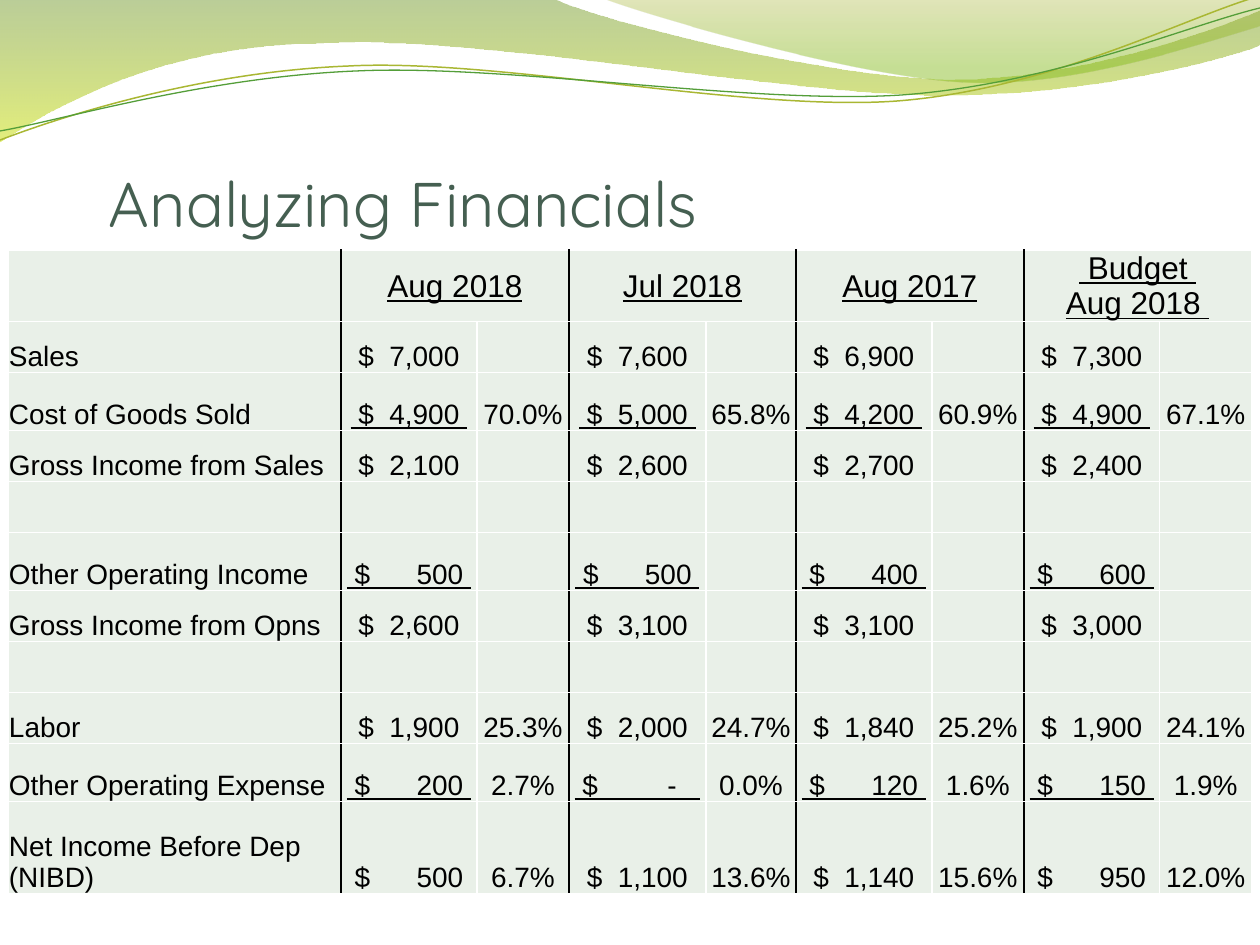
from lxml import etree
from pptx import Presentation
from pptx.dml.color import RGBColor
from pptx.enum.text import MSO_ANCHOR, MSO_AUTO_SIZE, PP_ALIGN
from pptx.oxml.ns import qn
from pptx.util import Emu, Pt

LEFT, CENTER = PP_ALIGN.LEFT, PP_ALIGN.CENTER
MIDDLE, BOTTOM = MSO_ANCHOR.MIDDLE, MSO_ANCHOR.BOTTOM
NO_AUTOFIT = MSO_AUTO_SIZE.NONE
EMU_PER_PX = 914400 / 126
TITLE_ONLY = 5

CELL_TINT, BLACK, WHITE = "E9F0E8", "000000", "FFFFFF"
COLUMN_WIDTHS = [333, 136, 92, 137, 90, 136, 92, 136, 92]
AMOUNT_COLUMNS = (1, 3, 5, 7)
HEADER_HEIGHT = 71

PERIODS = ["Aug 2018", "Jul 2018", "Aug 2017", " Budget \nAug 2018 "]
NO_SHARES = [""] * 4
STATEMENT = [
    ("Sales", 51, False, ["7,000", "7,600", "6,900", "7,300"], NO_SHARES),
    ("Cost of Goods Sold", 58, True, ["4,900", "5,000", "4,200", "4,900"],
     ["70.0%", "65.8%", "60.9%", "67.1%"]),
    ("Gross Income from Sales", 51, False, ["2,100", "2,600", "2,700", "2,400"], NO_SHARES),
    ("", 51, False, [""] * 4, NO_SHARES),
    ("Other Operating Income", 58, True, ["500", "500", "400", "600"], NO_SHARES),
    ("Gross Income from Opns", 51, False, ["2,600", "3,100", "3,100", "3,000"], NO_SHARES),
    ("", 51, False, [""] * 4, NO_SHARES),
    ("Labor", 51, False, ["1,900", "2,000", "1,840", "1,900"],
     ["25.3%", "24.7%", "25.2%", "24.1%"]),
    ("Other Operating Expense", 58, True, ["200", "-", "120", "150"],
     ["2.7%", "0.0%", "1.6%", "1.9%"]),
    ("Net Income Before Dep (NIBD)", 92, False, ["500", "1,100", "1,140", "950"],
     ["6.7%", "13.6%", "15.6%", "12.0%"]),
]

BROAD_WAVE = [
    (0, -1), (554, -1), (599, 21, 835, 79, 955, 79), (1075, 79, 1207, 33, 1260, 11),
    (1261, 45), (1239, 55, 1095, 96, 939, 95), (784, 95, 480, 35, 324, 43),
    (163, 44, 57, 105, -1, 142),
]
RIGHT_WAVE = [
    (604, -1), (641, 14, 859, 78, 968, 82), (1077, 87, 1211, 40, 1260, 26), (1260, 0),
]
OLIVE_STRAND = [
    (0, 140), (60, 117, 198, 72, 348, 66), (497, 58, 746, 112, 897, 101),
    (1050, 89, 1182, 19, 1256, -3),
]
GREEN_STRAND = [
    (0, 131), (59, 121, 205, 77, 357, 71), (507, 64, 752, 105, 902, 95),
    (1053, 84, 1186, 26, 1260, 8),
]


def px(length):
    """Turn pixels into EMU."""
    return Emu(round(length * EMU_PER_PX))


def rgb(value):
    """Turn a hex string into a colour."""
    return RGBColor.from_string(value)


def add_outline(slide, segments, close):
    """Add a freeform of straight and cubic segments."""
    anchors = [(px(segment[-2]), px(segment[-1])) for segment in segments]
    builder = slide.shapes.build_freeform(*anchors[0])
    builder.add_line_segments(anchors[1:], close=close)
    outline = builder.convert_to_shape()
    outline.shadow.inherit = False
    sides = list(outline.element.spPr.iter(qn("a:lnTo")))
    for side, segment in zip(sides, segments[1:]):
        if len(segment) == 6:
            side.tag = qn("a:cubicBezTo")
            for place in (0, 1):
                x, y = segment[2 * place:2 * place + 2]
                control = etree.Element(
                    qn("a:pt"), x=str(px(x) - outline.left), y=str(px(y) - outline.top))
                side.insert(place, control)
    return outline


def add_wave(slide, segments, stops):
    """Add a wave with a translucent vertical gradient."""
    wave = add_outline(slide, segments, True)
    wave.line.fill.background()
    wave.fill.gradient()
    wave.fill.gradient_angle = 270
    for stop, (position, color, _) in zip(wave.fill.gradient_stops, stops):
        stop.position = position
        stop.color.rgb = rgb(color)
    tints = wave.element.spPr.iter(qn("a:srgbClr"))
    for tint, (_, _, opacity) in zip(tints, stops):
        etree.SubElement(tint, qn("a:alpha"), val=str(opacity * 1000))


def add_strand(slide, segments, color, width):
    """Add a thin curved line."""
    strand = add_outline(slide, segments, False)
    strand.fill.background()
    strand.line.color.rgb = rgb(color)
    strand.line.width = Pt(width)


def format_runs(paragraph, size, font, color, underline=False):
    """Give every run of a paragraph its font."""
    for run in paragraph.runs:
        run.font.size = Pt(size)
        run.font.name = font
        run.font.color.rgb = rgb(color)
        run.font.underline = underline


def place_title(slide, wording):
    """Move and format the title in front of the waves."""
    title = slide.shapes.title
    slide.shapes.element.append(title.element)
    title.left, title.top, title.width, title.height = px(109), px(152), px(1134), px(88)
    frame = title.text_frame
    frame.text = wording
    frame.auto_size = NO_AUTOFIT
    frame.vertical_anchor = BOTTOM
    frame.margin_left = frame.margin_right = frame.margin_bottom = 0
    frame.margin_top = px(6)
    frame.paragraphs[0].alignment = LEFT
    format_runs(frame.paragraphs[0], 36, "Quicksand", "455F51")


def style_cell(cell, left_color, right_color):
    """Set the borders, fill and margins of a cell."""
    properties = cell._tc.get_or_add_tcPr()
    borders = {"a:lnL": left_color, "a:lnR": right_color, "a:lnT": WHITE, "a:lnB": WHITE}
    for side, color in borders.items():
        border = etree.SubElement(properties, qn(side), w=str(Pt(1)))
        paint = etree.SubElement(border, qn("a:solidFill"))
        etree.SubElement(paint, qn("a:srgbClr"), val=color)
    cell.fill.solid()
    cell.fill.fore_color.rgb = rgb(CELL_TINT)
    cell.margin_left = cell.margin_right = cell.margin_top = px(1)
    cell.margin_bottom = 0
    cell.vertical_anchor = BOTTOM


def write_cell(cell, wording, size=16, alignment=CENTER, underline=False):
    """Write the text of a cell."""
    cell.text_frame.text = wording
    for paragraph in cell.text_frame.paragraphs:
        paragraph.alignment = alignment
        format_runs(paragraph, size, "Arial", BLACK, underline)


def accounting(amount):
    """Return an amount in the padded accounting number format."""
    if amount == "-":
        return f" ${amount:>10}".ljust(15)
    width = 7 if "," in amount else 9
    return f" ${amount:>{width}} "


def add_statement(slide):
    """Add the table of periods and statement lines."""
    heights = [HEADER_HEIGHT] + [line[1] for line in STATEMENT]
    table = slide.shapes.add_table(
        len(heights), len(COLUMN_WIDTHS), px(8), px(250),
        px(sum(COLUMN_WIDTHS)), px(sum(heights)),
    ).table
    table.first_row = table.horz_banding = False
    for column, width in zip(table.columns, COLUMN_WIDTHS):
        column.width = px(width)
    for row_index, (row, height) in enumerate(zip(table.rows, heights)):
        row.height = px(height)
        for index, cell in enumerate(row.cells):
            left = BLACK if index in AMOUNT_COLUMNS else WHITE
            period_end = index + 1 in AMOUNT_COLUMNS
            merged = row_index == 0 and index in AMOUNT_COLUMNS[:-1]
            style_cell(cell, left, BLACK if period_end or merged else WHITE)
    for index, period in zip(AMOUNT_COLUMNS, PERIODS):
        heading = table.cell(0, index)
        heading.merge(table.cell(0, index + 1))
        heading.vertical_anchor = MIDDLE
        write_cell(heading, period, 18, underline=True)
    for row_index, (label, _, underline, amounts, shares) in enumerate(STATEMENT, 1):
        if label:
            write_cell(table.cell(row_index, 0), label, alignment=LEFT)
        for index, amount, share in zip(AMOUNT_COLUMNS, amounts, shares):
            if amount:
                write_cell(table.cell(row_index, index), accounting(amount), underline=underline)
            if share:
                write_cell(table.cell(row_index, index + 1), share)


def main():
    """Build and save the slide."""
    deck = Presentation()
    deck.slide_width, deck.slide_height = px(1260), px(945)
    slide = deck.slides.add_slide(deck.slide_layouts[TITLE_ONLY])
    add_wave(slide, BROAD_WAVE, [(0, "69921C", 45), (1, "CCE10F", 55)])
    add_wave(slide, RIGHT_WAVE, [(0, "9BAA1A", 30), (0.8, "81BA16", 45)])
    add_strand(slide, OLIVE_STRAND, "A9B733", 0.85)
    add_strand(slide, GREEN_STRAND, "549E39", 0.75)
    place_title(slide, "Analyzing Financials")
    add_statement(slide)
    deck.save("out.pptx")


if __name__ == "__main__":
    main()
